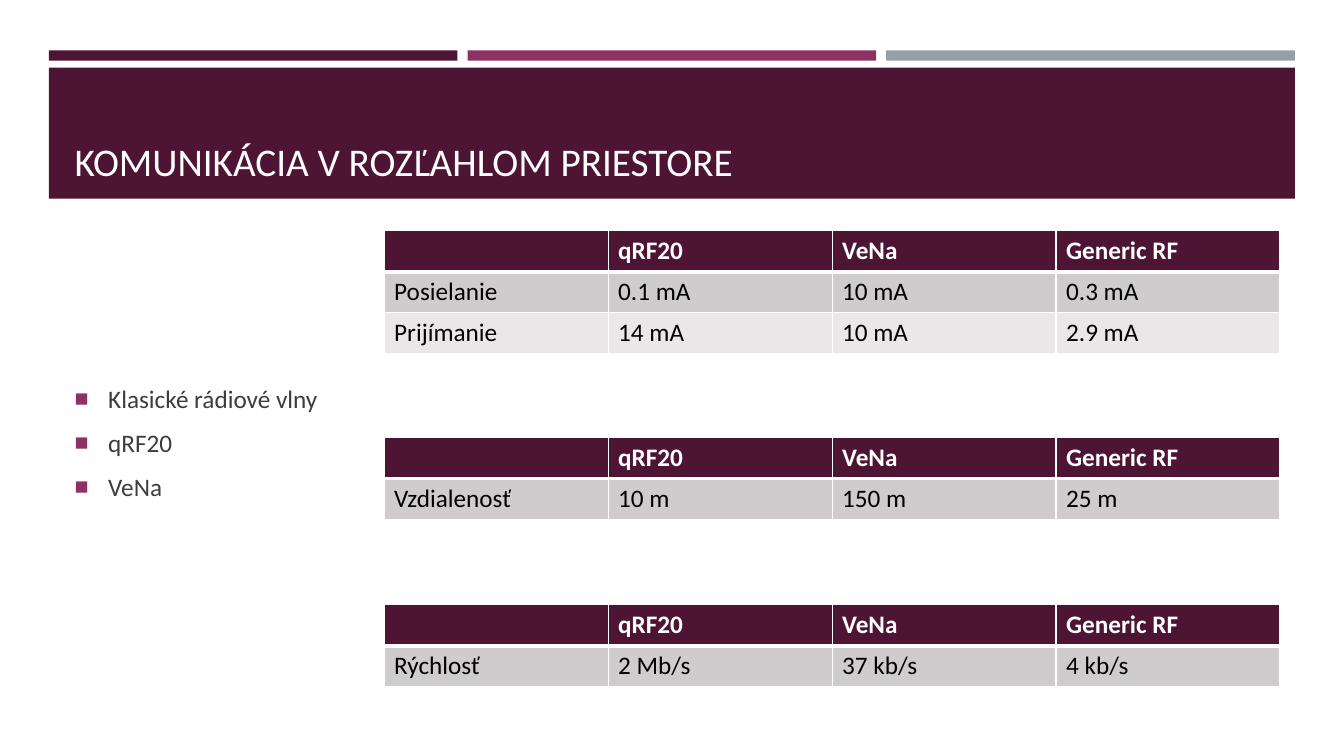
from collections import namedtuple
from dataclasses import dataclass

import lxml.etree
import pptx
import pptx.dml.color
import pptx.enum.shapes
import pptx.enum.text
import pptx.oxml.ns
import pptx.util

Pt = pptx.util.Pt
qn = pptx.oxml.ns.qn
Box = namedtuple("Box", "left top width height")


@dataclass(frozen=True)
class Theme:
    font: str = "Calibri"
    title_size: int = 28
    text_size: int = 18
    plum: str = "4D1434"
    magenta: str = "903163"
    steel: str = "969FA7"
    white: str = "FFFFFF"
    body_text: str = "3D3D3D"
    cell_text: str = "000000"
    row_fills: tuple = ("D0CCCE", "E9E7E8")


THEME = Theme()
MODULES = ["", "qRF20", "VeNa", "Generic RF"]
ROW_HEIGHT = 29.2
COMPARISONS = [
    (164.9, [["Posielanie", "0.1 mA", "10 mA", "0.3 mA"],
             ["Prijímanie", "14 mA", "10 mA", "2.9 mA"]]),
    (312.5, [["Vzdialenosť", "10 m", "150 m", "25 m"]]),
    (432, [["Rýchlosť", "2 Mb/s", "37 kb/s", "4 kb/s"]]),
]


def rgb(color):
    return pptx.dml.color.RGBColor.from_string(color)


def place(shape, box):
    shape.left, shape.top, shape.width, shape.height = map(Pt, box)


def format_runs(paragraph, size, color, bold=False):
    for run in paragraph.runs:
        run.font.name = THEME.font
        run.font.size = Pt(size)
        run.font.color.rgb = rgb(color)
        run.font.bold = bold


def add_bar(slide, box, color):
    bar = slide.shapes.add_shape(
        pptx.enum.shapes.MSO_SHAPE.RECTANGLE, *map(Pt, box))
    bar.shadow.inherit = False
    bar.fill.solid()
    bar.fill.fore_color.rgb = rgb(color)
    bar.line.fill.background()


def add_header(slide, box, heading):
    """Three accent strips over a solid band that carries the title."""
    gap, strip_height, band_offset = 7.2, 7.4, 12.4
    strip_width = (box.width - 2 * gap) / 3
    for i, color in enumerate((THEME.plum, THEME.magenta, THEME.steel)):
        add_bar(slide, Box(box.left + i * (strip_width + gap), box.top,
                           strip_width, strip_height), color)
    band = Box(box.left, box.top + band_offset,
               box.width, box.height - band_offset)
    add_bar(slide, band, THEME.plum)

    title = slide.shapes.title
    title.element.getparent().append(title.element)  # in front of the band
    place(title, Box(band.left + 11.2, band.top + 7, band.width - 22.4, 80))
    frame = title.text_frame
    frame.text = heading
    frame.word_wrap = True
    frame.auto_size = pptx.enum.text.MSO_AUTO_SIZE.NONE
    frame.vertical_anchor = pptx.enum.text.MSO_ANCHOR.BOTTOM
    frame.paragraphs[0].alignment = pptx.enum.text.PP_ALIGN.LEFT
    format_runs(frame.paragraphs[0], THEME.title_size, THEME.white)


def set_square_bullet(paragraph):
    properties = paragraph._p.get_or_add_pPr()
    properties.set("marL", str(Pt(24)))
    properties.set("indent", str(-Pt(24)))
    bullet_color = lxml.etree.SubElement(properties, qn("a:buClr"))
    lxml.etree.SubElement(bullet_color, qn("a:srgbClr"), val=THEME.magenta)
    lxml.etree.SubElement(properties, qn("a:buSzPct"), val="92000")
    lxml.etree.SubElement(properties, qn("a:buFont"), typeface="Arial")
    lxml.etree.SubElement(properties, qn("a:buChar"), char="■")


def add_technology_list(slide, box, technologies):
    body = slide.placeholders[1]
    place(body, box)
    frame = body.text_frame
    frame.text = "\n".join(technologies)
    frame.word_wrap = True
    frame.auto_size = pptx.enum.text.MSO_AUTO_SIZE.NONE
    frame.vertical_anchor = pptx.enum.text.MSO_ANCHOR.MIDDLE
    for paragraph in frame.paragraphs:
        paragraph.line_spacing = 1.0
        paragraph.space_before = Pt(3.6)
        paragraph.space_after = Pt(6)
        set_square_bullet(paragraph)
        format_runs(paragraph, THEME.text_size, THEME.body_text)


def set_borders(cell, bottom_width):
    properties = cell._tc.get_or_add_tcPr()
    widths = {"a:lnL": 1, "a:lnR": 1, "a:lnT": 1, "a:lnB": bottom_width}
    for i, (side, width) in enumerate(widths.items()):
        border = lxml.etree.Element(qn(side), w=str(Pt(width)))
        fill = lxml.etree.SubElement(border, qn("a:solidFill"))
        lxml.etree.SubElement(fill, qn("a:srgbClr"), val=THEME.white)
        properties.insert(i, border)


def add_comparison(slide, box, measurements):
    rows = [MODULES] + measurements
    table = slide.shapes.add_table(
        len(rows), len(MODULES), *map(Pt, box)).table
    table.horz_banding = False
    for column in table.columns:
        column.width = Pt(box.width / len(MODULES))
    for r, values in enumerate(rows):
        table.rows[r].height = Pt(box.height / len(rows))
        is_header = r == 0
        fill = THEME.plum if is_header else THEME.row_fills[(r - 1) % 2]
        color = THEME.white if is_header else THEME.cell_text
        for c, value in enumerate(values):
            cell = table.cell(r, c)
            cell.fill.solid()
            cell.fill.fore_color.rgb = rgb(fill)
            # The rule under the header is shared with the first data row.
            set_borders(cell, 3 if is_header else 1)
            if value:
                cell.text_frame.text = value
                format_runs(cell.text_frame.paragraphs[0],
                            THEME.text_size, color, is_header)


def main():
    presentation = pptx.Presentation()
    presentation.slide_width = Pt(960)
    presentation.slide_height = Pt(540)
    slide = presentation.slides.add_slide(presentation.slide_layouts[1])

    add_header(slide, Box(34.9, 36, 890, 106),
               "KOMUNIKÁCIA V ROZĽAHLOM PRIESTORE")
    add_technology_list(slide, Box(46.1, 171.4, 868.3, 289.4),
                        ["Klasické rádiové vlny", "qRF20", "VeNa"])
    for top, measurements in COMPARISONS:
        height = ROW_HEIGHT * (len(measurements) + 1)
        add_comparison(slide, Box(274.4, top, 640, height), measurements)

    presentation.save("out.pptx")


if __name__ == "__main__":
    main()
